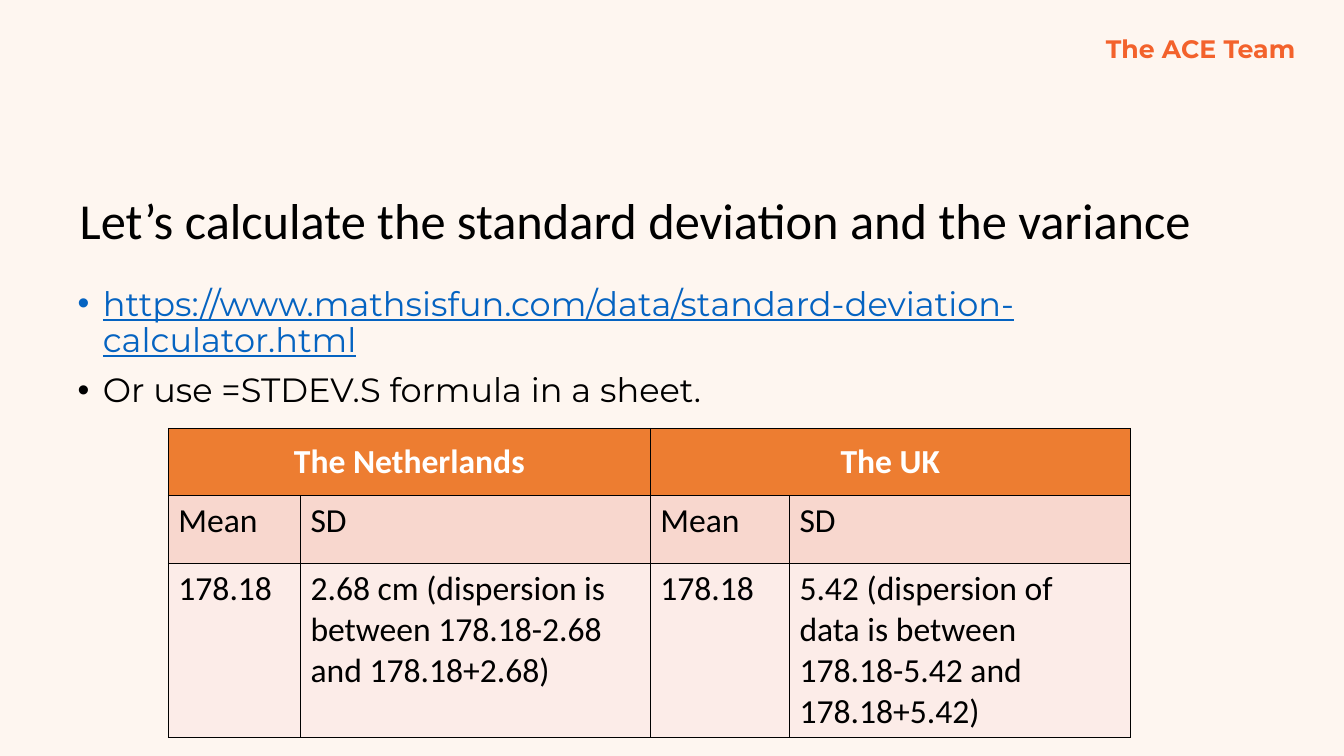
from lxml import etree
from pptx import Presentation
from pptx import util as u
from pptx.dml.color import RGBColor
from pptx.enum import text
from pptx.oxml import ns

WIDTH, HEIGHT = u.Inches(13.33), u.Inches(7.5)
COLORS = {
    "background": "FEF6F0", "brand": "F3622C", "link": "0563C1",
    "ink": "000000", "white": "FFFFFF", "header": "ED7D31",
    "subheader": "F8D7CE", "values": "FCECE8",
}
COLUMNS = (1.31, 3.47, 1.38, 3.38)
ROWS = (0.67, 0.67, 1.69)
TABLE = (
    ("header", ("The Netherlands", "", "The UK", "")),
    ("subheader", ("Mean", "SD", "Mean", "SD")),
    ("values", (
        "178.18", "2.68 cm (dispersion is between 178.18-2.68 and 178.18+2.68)",
        "178.18", "5.42 (dispersion of data is between 178.18-5.42 and 178.18+5.42)",
    )),
)


def rgb(name):
    return RGBColor.from_string(COLORS[name])


def add_run(p, words, color="ink", **formats):
    r = p.add_run()
    r.text = words
    for key, value in formats.items():
        setattr(r.font, key, value)
    r.font.color.rgb = rgb(color)


def place(sp, left, top, width, height):
    """Position a shape in inches."""
    sp.left, sp.top = u.Inches(left), u.Inches(top)
    sp.width, sp.height = u.Inches(width), u.Inches(height)


def set_frame(sp, anchor, wrap=True):
    tf = sp.text_frame
    formats = {"word_wrap": wrap, "vertical_anchor": anchor,
               "auto_size": text.MSO_AUTO_SIZE.NONE}
    for key, value in formats.items():
        setattr(tf, key, value)
    return tf


def add_team_label(s):
    sp = s.shapes.add_textbox(0, 0, 0, 0)
    place(sp, 10.87, 0.28, 2.12, 0.4)
    tf = set_frame(sp, text.MSO_ANCHOR.TOP, wrap=False)
    add_run(tf.paragraphs[0], "The ACE Team", "brand",
            name="Montserrat", size=u.Pt(18), bold=True)


def fill_title(s, words):
    sp = s.shapes.title
    place(sp, 0.69, 1.49, 11.5, 1.45)
    p = set_frame(sp, text.MSO_ANCHOR.MIDDLE).paragraphs[0]
    p.alignment, p.line_spacing = text.PP_ALIGN.LEFT, 0.9
    add_run(p, words, name="Calibri", size=u.Pt(36))


def fill_bullets(s, items):
    sp = s.placeholders[1]
    place(sp, 0.67, 2.8, 11.48, 1.51)
    tf = set_frame(sp, text.MSO_ANCHOR.TOP)
    for i, (words, color, underline) in enumerate(items):
        p = tf.add_paragraph() if i else tf.paragraphs[0]
        pPr = p._p.get_or_add_pPr()
        pPr.set("marL", str(u.Inches(0.25)))
        pPr.set("indent", str(-u.Inches(0.25)))
        etree.SubElement(pPr, ns.qn("a:buFont"), typeface="Arial")
        etree.SubElement(pPr, ns.qn("a:buChar"), char="•")
        p.line_spacing, p.space_before = 0.9, u.Pt(10 if i else 0)
        add_run(p, words, color, name="Montserrat", size=u.Pt(24),
                underline=underline)


def add_borders(cell):
    tcPr = cell._tc.get_or_add_tcPr()
    for i, side in enumerate("LRTB"):
        ln = etree.Element(ns.qn(f"a:ln{side}"), w=str(u.Pt(1)))
        fill = etree.SubElement(ln, ns.qn("a:solidFill"))
        etree.SubElement(fill, ns.qn("a:srgbClr"), val=COLORS["ink"])
        tcPr.insert(i, ln)


def add_results_table(s):
    table = s.shapes.add_table(
        len(ROWS), len(COLUMNS), u.Inches(1.67), u.Inches(4.25),
        u.Inches(sum(COLUMNS)), u.Inches(sum(ROWS))).table
    for column, width in zip(table.columns, COLUMNS):
        column.width = u.Inches(width)
    for row, height in zip(table.rows, ROWS):
        row.height = u.Inches(height)
    for first in (0, 2):
        table.cell(0, first).merge(table.cell(0, first + 1))
    for i, (kind, words) in enumerate(TABLE):
        heading = kind == "header"
        for j, label in enumerate(words):
            cell = table.cell(i, j)
            cell.fill.solid()
            cell.fill.fore_color.rgb = rgb(kind)
            add_borders(cell)
            if not label:
                continue
            p = cell.text_frame.paragraphs[0]
            if heading:
                cell.vertical_anchor = text.MSO_ANCHOR.MIDDLE
                p.alignment = text.PP_ALIGN.CENTER
            add_run(p, label, "white" if heading else "ink",
                    name="Calibri", size=u.Pt(24), bold=heading)


def main():
    prs = Presentation()
    prs.slide_width, prs.slide_height = WIDTH, HEIGHT
    s = prs.slides.add_slide(prs.slide_layouts[1])
    s.background.fill.solid()
    s.background.fill.fore_color.rgb = rgb("background")
    add_team_label(s)
    fill_title(s, "Let’s calculate the standard deviation and the variance")
    fill_bullets(s, (
        ("https://www.mathsisfun.com/data/standard-deviation-calculator.html",
         "link", True),
        ("Or use =STDEV.S formula in a sheet.", "ink", False),
    ))
    add_results_table(s)
    prs.save("out.pptx")


if __name__ == "__main__":
    main()
